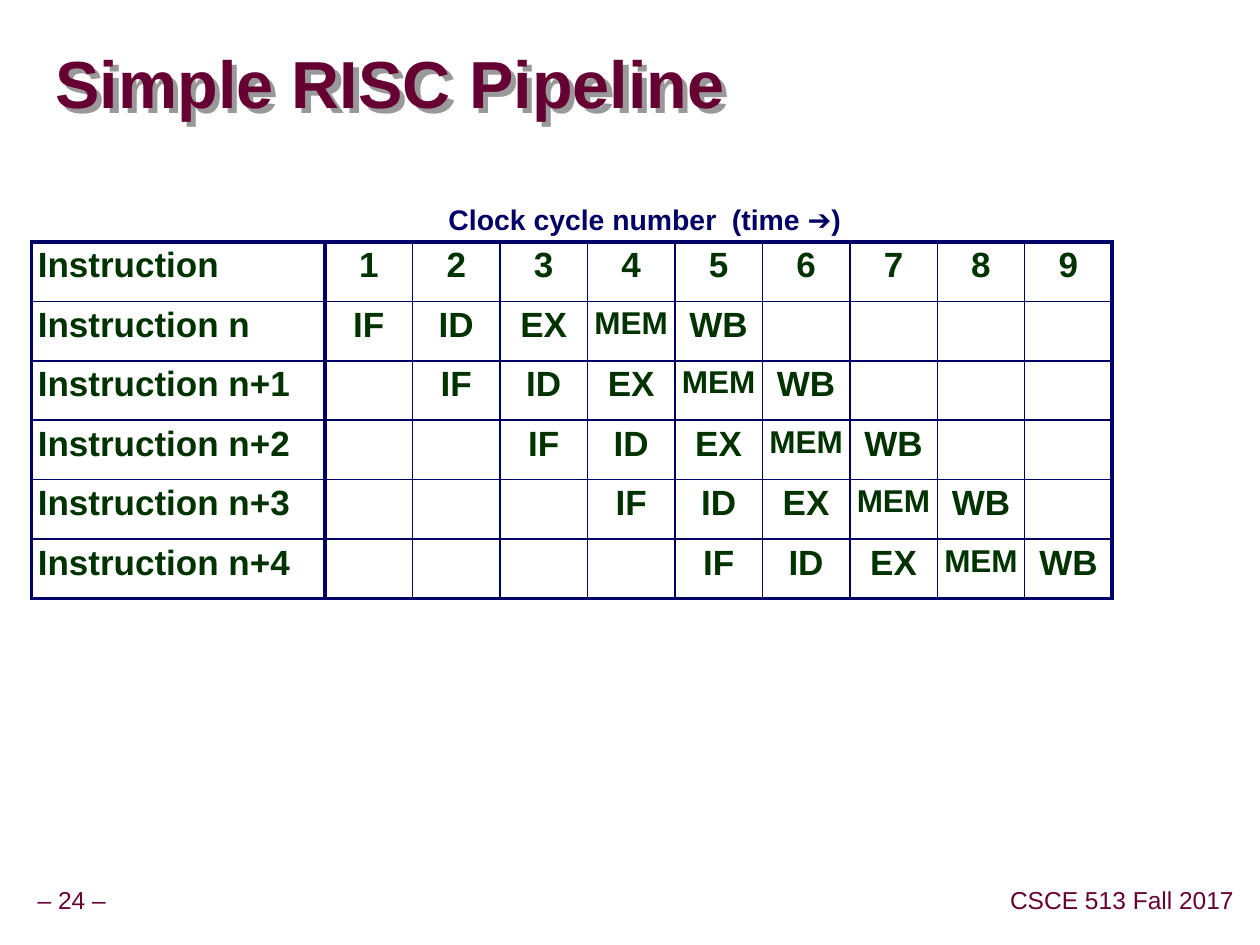
import pptx
import pptx.dml.color
import pptx.enum.text
import pptx.oxml
import pptx.oxml.ns
import pptx.util
from lxml import etree

Inches = pptx.util.Inches
ALIGN = pptx.enum.text.PP_ALIGN
ANCHOR = pptx.enum.text.MSO_ANCHOR

THEME = {
    "font": "Arial",
    "maroon": "660033", "green": "003300", "navy": "000066", "shadow": "999999",
    "title": 38, "caption": 28, "cell": 20, "small": 18, "footer": 14,
    "thin": 1, "thick": 2.25,
}

TITLE = "Simple RISC Pipeline"
CAPTION = "Clock cycle number  (time ➔)"
FOOTERS = [("– 24 –", 0.24, 0.66), ("CSCE 513 Fall 2017", 7.96, 1.89)]
INSTRUCTIONS = ["Instruction", "Instruction n", "Instruction n+1",
                "Instruction n+2", "Instruction n+3", "Instruction n+4"]
STAGES = ["IF", "ID", "EX", "MEM", "WB"]
CYCLES = 9

TABLE_TOP, TABLE_LEFT = 1.92, 0.25
NAME_WIDTH, CYCLE_WIDTH, ROW_HEIGHT = 2.33, 6.25 / CYCLES, 2.83 / len(INSTRUCTIONS)
INSET = 0.05


def write(tf, text, size, color, bold=False, align=ALIGN.LEFT, spacing=0.9,
          baseline=None):
    p = tf.paragraphs[0]
    p.alignment, p.line_spacing = align, spacing
    r = p.add_run()
    r.text = text
    r.font.name, r.font.size, r.font.bold = THEME["font"], pptx.util.Pt(size), bold
    r.font.color.rgb = pptx.dml.color.RGBColor.from_string(color)
    if baseline is not None:
        r.font._element.set("baseline", str(baseline * 1000))


def set_insets(target, inset):
    target.margin_left = target.margin_right = Inches(inset)
    target.margin_top = target.margin_bottom = Inches(inset)


def add_text(s, text, left, top, width, height, size, color, **fmt):
    tf = s.shapes.add_textbox(
        Inches(left), Inches(top), Inches(width), Inches(height)).text_frame
    tf.word_wrap = True
    set_insets(tf, INSET)
    write(tf, text, size, color, **fmt)
    return tf


def add_shadow(shape):
    """Cast the text's shadow down and to the right."""
    shape._element.spPr.append(pptx.oxml.parse_xml(
        f'<a:effectLst {pptx.oxml.ns.nsdecls("a")}>'
        f'<a:outerShdw dist="{Inches(0.06)}" dir="2700000" algn="ctr" rotWithShape="0">'
        f'<a:srgbClr val="{THEME["shadow"]}"/></a:outerShdw></a:effectLst>'))


def set_borders(cell, widths):
    """Draw the cell's left, right, top and bottom lines, in that order."""
    tc_pr = cell._tc.get_or_add_tcPr()
    for i, (side, width) in enumerate(zip("LRTB", widths)):
        ln = etree.Element(pptx.oxml.ns.qn(f"a:ln{side}"), w=str(pptx.util.Pt(width)))
        fill = etree.SubElement(ln, pptx.oxml.ns.qn("a:solidFill"))
        etree.SubElement(fill, pptx.oxml.ns.qn("a:srgbClr"), val=THEME["navy"])
        tc_pr.insert(i, ln)


def add_grid(s, rows, left, col_width, align):
    n_rows, n_cols = len(rows), len(rows[0])
    table = s.shapes.add_table(
        n_rows, n_cols, Inches(left), Inches(TABLE_TOP),
        Inches(col_width * n_cols), Inches(ROW_HEIGHT * n_rows)).table
    table.first_row = table.horz_banding = False
    for row in table.rows:
        row.height = Inches(ROW_HEIGHT)
    for col in table.columns:
        col.width = Inches(col_width)
    for i, row in enumerate(rows):
        for j, text in enumerate(row):
            cell = table.cell(i, j)
            set_insets(cell, INSET)
            cell.fill.background()
            outer = (j == 0, j == n_cols - 1, i == 0, i == n_rows - 1)
            set_borders(cell, [THEME["thick" if edge else "thin"] for edge in outer])
            if text:
                size = THEME["small" if text == "MEM" else "cell"]
                write(cell.text_frame, text, size, THEME["green"], bold=True,
                      align=align, spacing=0.95)


def pipeline_rows():
    """Each instruction starts one cycle after the one before it."""
    rows = [[str(n + 1) for n in range(CYCLES)]]
    for start in range(len(INSTRUCTIONS) - 1):
        rest = CYCLES - start - len(STAGES)
        rows.append([""] * start + STAGES + [""] * rest)
    return rows


def main():
    prs = pptx.Presentation()
    prs.slide_width, prs.slide_height = Inches(10), Inches(7.5)
    s = prs.slides.add_slide(prs.slide_layouts[5])

    for text, left, width in FOOTERS:
        tf = add_text(s, text, left, 7, width, 0.31, THEME["footer"],
                      THEME["maroon"], align=ALIGN.CENTER)
        tf.word_wrap = False
        tf.vertical_anchor = ANCHOR.MIDDLE

    title = s.shapes.title
    title.left, title.top = Inches(0.44), Inches(0.27)
    title.width, title.height = Inches(9.53), Inches(0.85)
    set_insets(title.text_frame, 0)
    title.text_frame.vertical_anchor = ANCHOR.MIDDLE
    write(title.text_frame, TITLE, THEME["title"], THEME["maroon"], bold=True,
          spacing=0.87)
    add_shadow(title)

    add_grid(s, pipeline_rows(), TABLE_LEFT + NAME_WIDTH, CYCLE_WIDTH, ALIGN.CENTER)
    add_grid(s, [[name] for name in INSTRUCTIONS], TABLE_LEFT, NAME_WIDTH, ALIGN.LEFT)

    add_text(s, CAPTION, 3.51, 1.3, 3.86, 0.39, THEME["caption"], THEME["navy"],
             bold=True, baseline=-25)

    prs.save("out.pptx")


if __name__ == "__main__":
    main()
